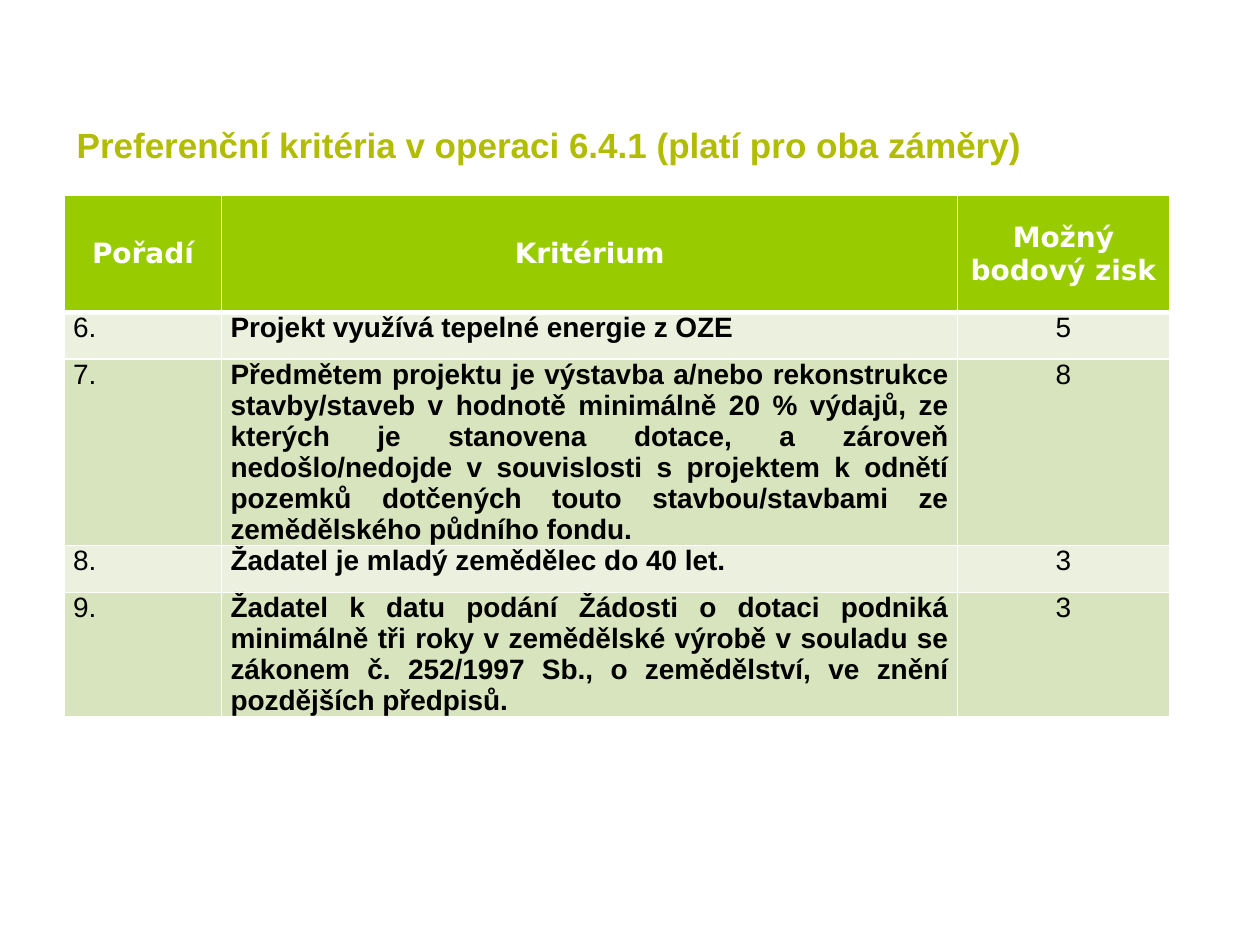
import pptx
import pptx.util
import pptx.dml.color
import pptx.enum.text
import pptx.oxml
import pptx.oxml.ns

Inches = pptx.util.Inches
Pt = pptx.util.Pt
ALIGN = pptx.enum.text.PP_ALIGN
ANCHOR = pptx.enum.text.MSO_ANCHOR


def style_font(paragraph, name, size, color, bold):
    font = paragraph.font
    font.name = name
    font.size = Pt(size)
    font.bold = bold
    font.color.rgb = pptx.dml.color.RGBColor.from_string(color)


def add_border(cell, side, width):
    cell._tc.get_or_add_tcPr().append(pptx.oxml.parse_xml(
        f'<a:ln{side} {pptx.oxml.ns.nsdecls("a")} w="{Pt(width)}">'
        f'<a:solidFill><a:srgbClr val="FFFFFF"/></a:solidFill></a:ln{side}>'))


presentation = pptx.Presentation()
presentation.slide_width = Inches(10)
presentation.slide_height = Inches(7.5)
slide = presentation.slides.add_slide(presentation.slide_layouts[6])

rows = [
    ("Pořadí", "Kritérium", "Možný bodový zisk"),
    ("6.", "Projekt využívá tepelné energie z OZE", "5"),
    ("7.", "Předmětem projektu je výstavba a/nebo rekonstrukce stavby/staveb "
           "v hodnotě minimálně 20 % výdajů, ze kterých je stanovena dotace, "
           "a zároveň nedošlo/nedojde v souvislosti s projektem k odnětí "
           "pozemků dotčených touto stavbou/stavbami ze zemědělského půdního fondu.", "8"),
    ("8.", "Žadatel je mladý zemědělec do 40 let.", "3"),
    ("9.", "Žadatel k datu podání Žádosti o dotaci podniká minimálně tři roky "
           "v zemědělské výrobě v souladu se zákonem č. 252/1997 Sb., "
           "o zemědělství, ve znění pozdějších předpisů.", "3"),
]
column_widths = [1.25, 5.84, 1.68]
row_heights = [0.93, 0.37, 1.48, 0.37, 0.98]
column_alignments = [ALIGN.LEFT, ALIGN.JUSTIFY, ALIGN.CENTER]

table = slide.shapes.add_table(
    len(rows), len(column_widths), Inches(0.51), Inches(1.55),
    Inches(sum(column_widths)), Inches(sum(row_heights))).table
table.first_row = True
table.horz_banding = False
for column, width in zip(table.columns, column_widths):
    column.width = Inches(width)
for row, height in zip(table.rows, row_heights):
    row.height = Inches(height)

for row_index, texts in enumerate(rows):
    header = row_index == 0
    fill_color = "99CC00" if header else ("D7E4BD", "EBF1DE")[row_index % 2]
    for column_index, text in enumerate(texts):
        cell = table.cell(row_index, column_index)
        cell.margin_left = cell.margin_right = Inches(0.1 if header else 0.07)
        cell.margin_top = cell.margin_bottom = Inches(0.05 if header else 0)
        cell.vertical_anchor = ANCHOR.MIDDLE if header else ANCHOR.TOP
        add_border(cell, "L", 0.91)
        add_border(cell, "R", 0.91)
        add_border(cell, "T", 2.95 if row_index == 1 else 0.91)
        add_border(cell, "B", 2.95 if header else 0.91)
        cell.fill.solid()
        cell.fill.fore_color.rgb = pptx.dml.color.RGBColor.from_string(fill_color)
        cell.text = text
        paragraph = cell.text_frame.paragraphs[0]
        if header:
            paragraph.alignment = ALIGN.CENTER
            paragraph.line_spacing = 1.01
            style_font(paragraph, "DejaVu Sans", 16, "FFFFFF", True)
        else:
            paragraph.alignment = column_alignments[column_index]
            paragraph.space_after = Pt(12)
            style_font(paragraph, "Arial", 16, "000000", column_index == 1)

title = slide.shapes.add_textbox(Inches(0.51), Inches(0.52), Inches(8.82), Inches(0.84))
title.text_frame.word_wrap = True
title.text_frame.vertical_anchor = ANCHOR.BOTTOM
paragraph = title.text_frame.paragraphs[0]
paragraph.text = "Preferenční kritéria v operaci 6.4.1 (platí pro oba záměry)"
style_font(paragraph, "Arial", 20, "B2BC00", True)

presentation.save("out.pptx")
